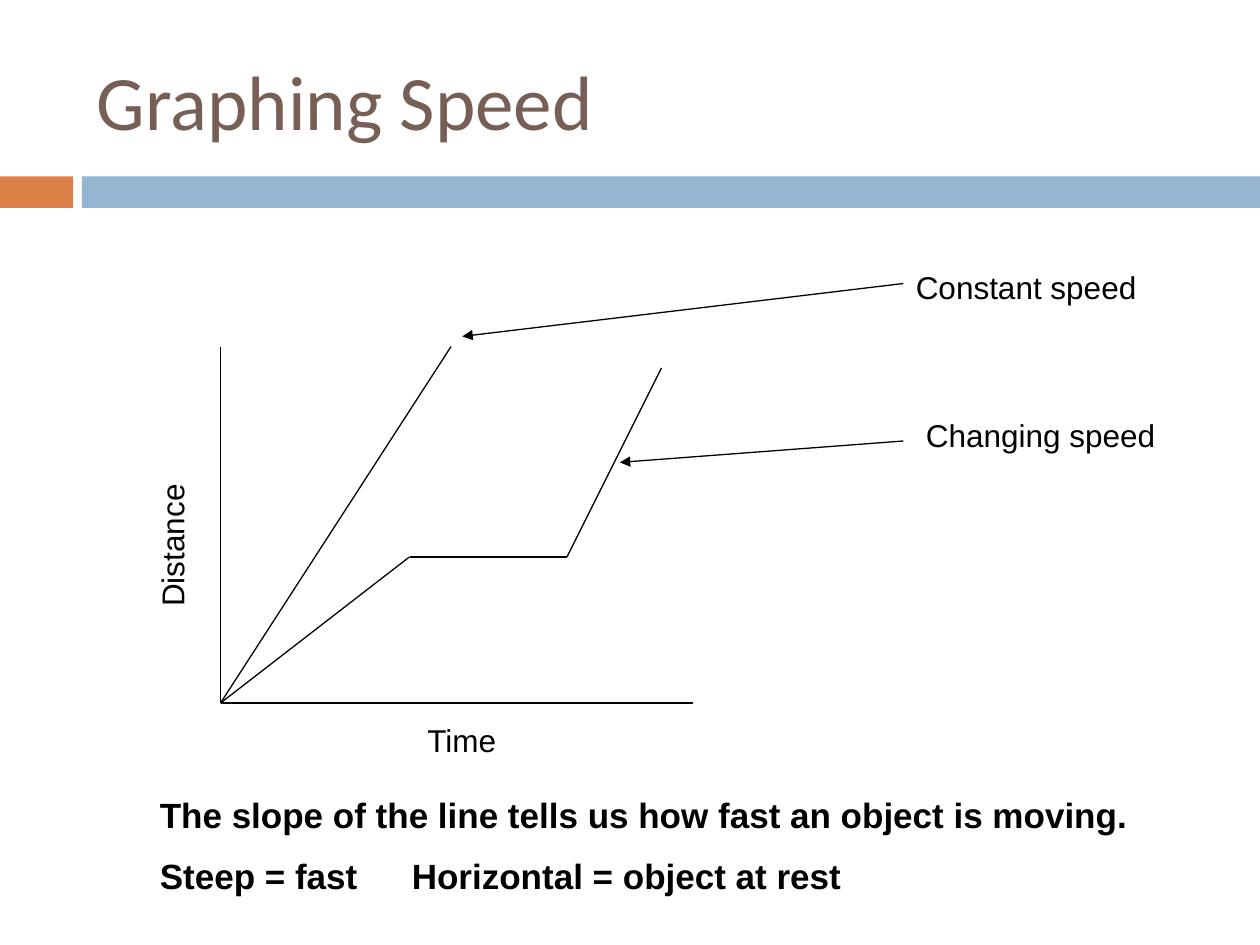
from lxml.etree import SubElement
from pptx import Presentation
from pptx.dml.color import RGBColor
from pptx.enum.shapes import MSO_CONNECTOR as CONN, MSO_SHAPE as SHAPE
from pptx.enum.text import MSO_ANCHOR as ANCHOR, PP_ALIGN as ALIGN
from pptx.oxml.ns import qn
from pptx.util import Inches, Pt

ORANGE = RGBColor(0xDD, 0x80, 0x47)
BLUE = RGBColor(0x94, 0xB6, 0xD2)
BROWN = RGBColor(0x77, 0x5F, 0x55)
BLACK = RGBColor(0, 0, 0)

TITLE = "Graphing Speed"
SUMMARY = [
    "The slope of the line tells us how fast an object is moving.",
    "Steep = fast\tHorizontal = object at rest",
]
BANDS = [(0, 0.58, ORANGE), (0.65, 9.35, BLUE)]

ORIGIN = (1.75, 5.58)
AXES = [(1.75, 2.75), ORIGIN, (5.5, 5.58)]
CONSTANT = [ORIGIN, (3.58, 2.75)]
CHANGING = [ORIGIN, (3.25, 4.42), (4.5, 4.42), (5.25, 2.92)]
POINTERS = [((7.17, 2.25), (3.67, 2.67)), ((7.17, 3.5), (4.92, 3.67))]

LABELS = [
    ("Time", 1.75, 5.67, 3.83, ALIGN.CENTER, 0),
    ("Distance", -0.55, 4.13, 3.83, ALIGN.CENTER, 270),
    ("Constant speed", 7.17, 2.08, 2.17, ALIGN.LEFT, 0),
    ("Changing speed", 7.25, 3.25, 2.17, ALIGN.LEFT, 0),
]


def add_band(s, left, width, color):
    sp = s.shapes.add_shape(SHAPE.RECTANGLE, Inches(left), Inches(1.4), Inches(width), Inches(0.25))
    sp.shadow.inherit = False
    sp.fill.solid()
    sp.fill.fore_color.rgb = color
    sp.line.fill.background()


def add_text(s, lines, left, top, width, height, size, font="Arial", color=BLACK,
             bold=False, align=ALIGN.LEFT, anchor=ANCHOR.TOP):
    sp = s.shapes.add_textbox(Inches(left), Inches(top), Inches(width), Inches(height))
    tf = sp.text_frame
    tf.word_wrap = True
    tf.vertical_anchor = anchor
    tf.text = "\n".join(lines)
    for i, p in enumerate(tf.paragraphs):
        p.alignment = align
        if i:
            p.space_before = Pt(11)
        for r in p.runs:
            r.font.name = font
            r.font.size = Pt(size)
            r.font.bold = bold
            r.font.color.rgb = color
    return sp


def add_line(s, start, end, arrow=False):
    line = s.shapes.add_connector(CONN.STRAIGHT, *(Inches(v) for v in start + end))
    line.line.color.rgb = BLACK
    line.line.width = Pt(0.75)
    if arrow:
        SubElement(line.line._get_or_add_ln(), qn("a:tailEnd"), type="triangle")
    SubElement(line._element.spPr, qn("a:effectLst"))


def main():
    prs = Presentation()
    prs.slide_width, prs.slide_height = Inches(10), Inches(7.5)
    s = prs.slides.add_slide(prs.slide_layouts[6])

    for band in BANDS:
        add_band(s, *band)
    add_text(s, [TITLE], 0.67, 0.25, 8.92, 1.08, 44, "Calibri", BROWN, anchor=ANCHOR.MIDDLE)

    for points in (AXES, CONSTANT, CHANGING):
        for start, end in zip(points, points[1:]):
            add_line(s, start, end)
    for start, end in POINTERS:
        add_line(s, start, end, arrow=True)

    for text, left, top, width, align, rotation in LABELS:
        label = add_text(s, [text], left, top, width, 0.4, 18, align=align)
        label.rotation = rotation
    add_text(s, SUMMARY, 1.17, 6.25, 9, 0.94, 20, bold=True)

    prs.save("out.pptx")


if __name__ == "__main__":
    main()
